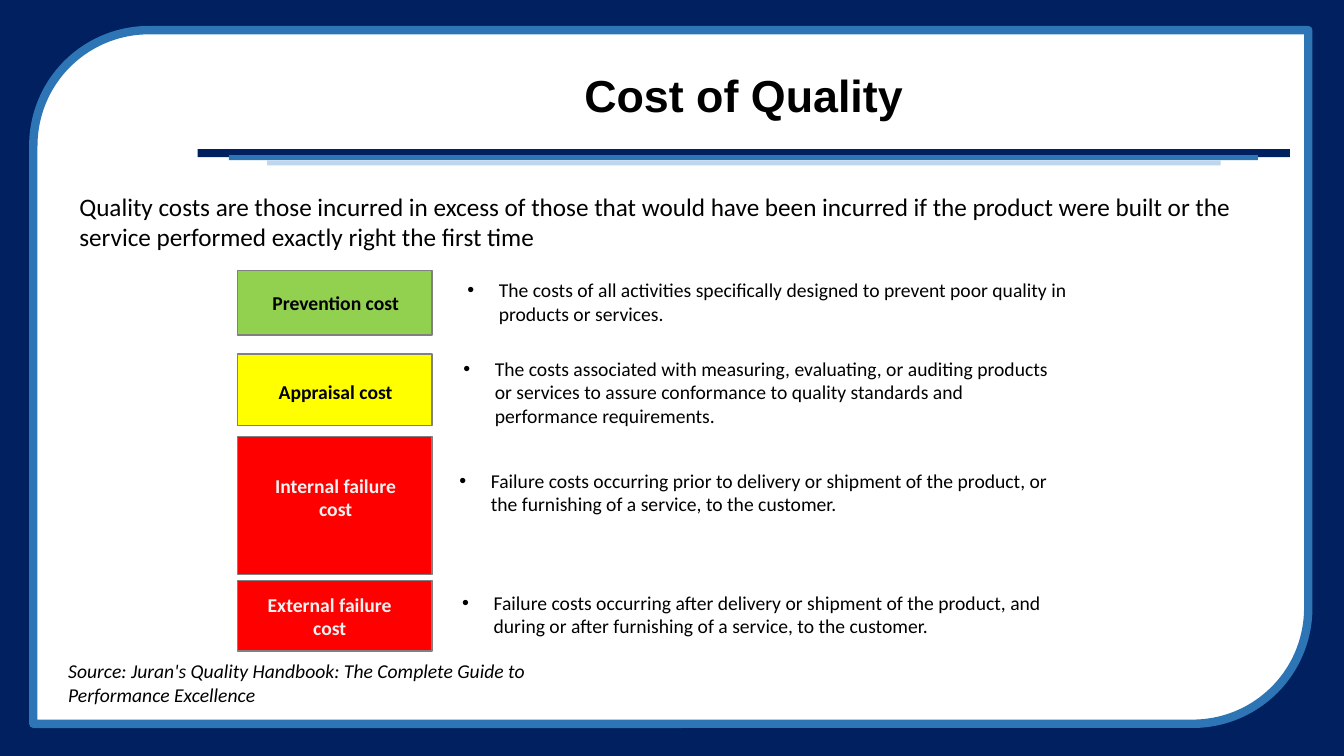
from lxml import etree
from pptx import Presentation
from pptx import util as u
from pptx.dml.color import RGBColor
from pptx.enum import shapes, text
from pptx.oxml.ns import qn

NAVY, BLUE, PALE_BLUE = "002060", "2E75B6", "BDD7EE"
BLACK, WHITE, OFF_WHITE, GREY = "000000", "FFFFFF", "F2F2F2", "808080"
GREEN, YELLOW, RED = "92D050", "FFFF00", "FF0000"
RECTANGLE = shapes.MSO_SHAPE.RECTANGLE

HEADER_BARS = [
    (NAVY, (4.98, 3.76, 27.53, 0.2)),
    (BLUE, (5.77, 3.91, 25.93, 0.13)),
    (PALE_BLUE, (6.73, 4.04, 24.03, 0.13)),
]

COSTS = [
    ("Prevention cost", GREEN, BLACK, (6.81, 1.63), (6.15, 7.21, 4.62, 0.86),
     "The costs of all activities specifically designed to prevent poor quality "
     "in products or services.", (11.53, 6.88, 16.21, 1.45)),
    ("Appraisal cost", YELLOW, BLACK, (8.92, 1.8), (6.15, 9.45, 4.62, 0.86),
     "The costs associated with measuring, evaluating, or auditing products or "
     "services to assure conformance to quality standards and performance "
     "requirements.", (11.43, 8.86, 15.72, 2.06)),
    ("Internal failure cost", RED, OFF_WHITE, (11, 3.48), (6.58, 11.81, 3.76, 1.45),
     "Failure costs occurring prior to delivery or shipment of the product, or "
     "the furnishing of a service, to the customer.", (11.33, 11.68, 15.72, 1.45)),
    ("External failure cost", RED, OFF_WHITE, (14.63, 1.78), (6.43, 14.81, 3.76, 1.45),
     "Failure costs occurring after delivery or shipment of the product, and "
     "during or after furnishing of a service, to the customer.",
     (11.4, 14.76, 16.03, 1.45)),
]


def rgb(value):
    """Turn a hex string into a colour."""
    return RGBColor.from_string(value)


def add_block(slide, box, fill, line=None, width=1, kind=RECTANGLE):
    """Add a filled shape, outlined only when a line colour is given."""
    shape = slide.shapes.add_shape(kind, *map(u.Cm, box))
    shape.shadow.inherit = False
    shape.fill.solid()
    shape.fill.fore_color.rgb = rgb(fill)
    if line:
        shape.line.color.rgb = rgb(line)
        shape.line.width = u.Pt(width)
    else:
        shape.line.fill.background()
    return shape


def add_text(slide, box, words, size=14, color=BLACK, font="Calibri",
             bold=False, italic=False, centred=False, bullet=False):
    """Add a wrapping text box with one paragraph and return the box."""
    shape = slide.shapes.add_textbox(*map(u.Cm, box))
    frame = shape.text_frame
    frame.word_wrap = True
    paragraph = frame.paragraphs[0]
    paragraph.text = words
    if centred:
        paragraph.alignment = text.PP_ALIGN.CENTER
    if bullet:
        add_bullet(paragraph)
    paragraph.font.name = font
    paragraph.font.size = u.Pt(size)
    paragraph.font.bold = bold
    paragraph.font.italic = italic
    paragraph.font.color.rgb = rgb(color)
    return shape


def add_bullet(paragraph):
    """Give a paragraph a round bullet with a hanging indent."""
    properties = paragraph._p.get_or_add_pPr()
    properties.set("marL", str(u.Cm(0.79)))
    properties.set("indent", str(-u.Cm(0.79)))
    etree.SubElement(properties, qn("a:buFont")).set("typeface", "Arial")
    etree.SubElement(properties, qn("a:buChar")).set("char", "•")


def add_backdrop(slide):
    """Draw the navy border, the white panel and the bars under the title."""
    add_block(slide, (0, 0, 33.87, 19.05), NAVY)
    add_block(slide, (0.84, 0.76, 32.13, 17.48), WHITE, BLUE, 6,
              shapes.MSO_SHAPE.ROUND_2_DIAG_RECTANGLE)
    for color, box in HEADER_BARS:
        add_block(slide, box, color)


def add_title(slide, words):
    """Add the slide title, centred above the bars."""
    title = add_text(slide, (4.98, 1.24, 27.53, 2.46), words, size=32,
                     font="Arial", bold=True, centred=True)
    title.text_frame.vertical_anchor = text.MSO_ANCHOR.MIDDLE
    title.text_frame.paragraphs[0].line_spacing = 0.9


def add_cost(slide, label, fill, color, span, label_box, description, description_box):
    """Add one cost category with its coloured block and description."""
    top, height = span
    add_block(slide, (5.99, top, 4.9, height), fill, GREY)
    add_text(slide, label_box, label, color=color, bold=True, centred=True)
    add_text(slide, description_box, description, bullet=True)


def main():
    """Build the slide and save it."""
    presentation = Presentation()
    presentation.slide_width = u.Cm(33.87)
    presentation.slide_height = u.Cm(19.05)
    slide = presentation.slides.add_slide(presentation.slide_layouts[6])
    add_backdrop(slide)
    add_title(slide, "Cost of Quality")
    add_text(slide, (1.75, 4.7, 29.64, 1.8),
             "Quality costs are those incurred in excess of those that would have "
             "been incurred if the product were built or the service performed "
             "exactly right the first time", size=18)
    for cost in COSTS:
        add_cost(slide, *cost)
    add_text(slide, (1.47, 16.48, 12.93, 1.45),
             "Source: Juran's Quality Handbook: The Complete Guide to "
             "Performance Excellence", italic=True)
    presentation.save("out.pptx")


if __name__ == "__main__":
    main()
